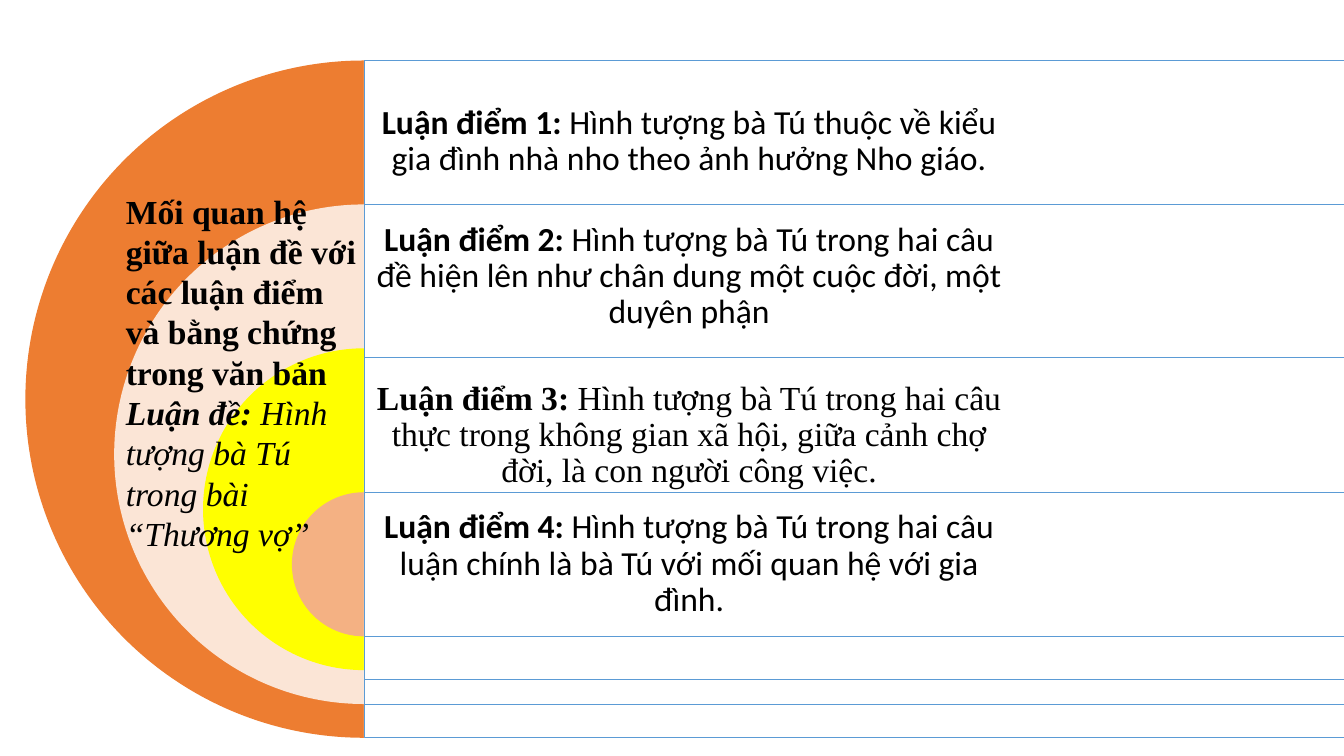
from lxml import etree
from pptx import Presentation
from pptx.dml.color import RGBColor
from pptx.enum.shapes import MSO_SHAPE
from pptx.enum.text import MSO_ANCHOR, MSO_AUTO_SIZE, PP_ALIGN
from pptx.oxml.ns import qn
from pptx.util import Pt

PIE, RECTANGLE = MSO_SHAPE.PIE, MSO_SHAPE.RECTANGLE
MIDDLE, TOP = MSO_ANCHOR.MIDDLE, MSO_ANCHOR.TOP
CENTER, LEFT = PP_ALIGN.CENTER, PP_ALIGN.LEFT
GROW, FIXED = MSO_AUTO_SIZE.SHAPE_TO_FIT_TEXT, MSO_AUTO_SIZE.NONE
SANS, SERIF = "Calibri", "Times New Roman"
BOLD, ITALIC, BOLD_ITALIC, PLAIN = {"bold": True}, {"italic": True}, {"bold": True, "italic": True}, {}

POINTS = [
    {"color": "ED7D31", "font": SANS, "shift": 0, "margins": (16.5, 3),
     "label": "Luận điểm 1: ",
     "text": "Hình tượng bà Tú thuộc về kiểu gia đình nhà nho theo ảnh hưởng Nho giáo."},
    {"color": "FBE5D6", "font": SANS, "shift": 0, "margins": (7.2, 7.2),
     "label": "Luận điểm 2: ",
     "text": "Hình tượng bà Tú trong hai câu đề hiện lên như chân dung một cuộc đời, một duyên phận"},
    {"color": "FFFF00", "font": SERIF, "shift": 6.5, "margins": (12, 3),
     "label": "Luận điểm 3: ",
     "text": "Hình tượng bà Tú trong hai câu thực trong không gian xã hội, giữa cảnh chợ đời, "
             "là con người công việc."},
    {"color": "F4B183", "font": SANS, "shift": 0, "margins": (7.2, 7.2),
     "label": "Luận điểm 4: ",
     "text": "Hình tượng bà Tú trong hai câu luận chính là bà Tú với mối quan hệ với gia đình."},
]
THESIS = [
    [("Mối quan hệ giữa luận đề với các luận điểm và bằng chứng trong văn bản", BOLD)],
    [("Luận đề: ", BOLD_ITALIC), ("Hình tượng bà Tú trong bài “Thương vợ”", ITALIC)],
]
AXIS, FIRST_TOP, ROW = 260, 43.2, 102.8
LARGEST, SHRINK = 483.8, 126.95
PANEL_WIDTH, TEXT_WIDTH = 929.5, 464.4


def color(hex_text):
    """Return the colour for a hex string."""
    return RGBColor.from_string(hex_text)


def add_filled(slide, kind, box, fill):
    """Add a flat filled shape without an outline."""
    shape = slide.shapes.add_shape(kind, *map(Pt, box))
    shape.shadow.inherit = False
    shape.fill.solid()
    shape.fill.fore_color.rgb = color(fill)
    shape.line.fill.background()
    return shape


def add_panel(slide, box):
    """Add a slightly transparent white panel with a thin blue outline."""
    panel = add_filled(slide, RECTANGLE, box, "FFFFFF")
    fill = panel.fill._xPr.find(qn("a:solidFill"))
    etree.SubElement(fill[0], qn("a:alpha"), val="90000")
    panel.line.color.rgb = color("5B9BD5")
    panel.line.width = Pt(0.5)


def add_text(slide, box, paragraphs, font_name, frame_format, paragraph_format):
    """Add a text box of paragraphs made of formatted runs."""
    frame = slide.shapes.add_textbox(*map(Pt, box)).text_frame
    for name, value in frame_format.items():
        setattr(frame, name, value)
    for index, runs in enumerate(paragraphs):
        paragraph = frame.add_paragraph() if index else frame.paragraphs[0]
        for name, value in paragraph_format.items():
            setattr(paragraph, name, value)
        for text, style in runs:
            run = paragraph.add_run()
            run.text = text
            run.font.color.rgb = color("000000")
            for name, value in {"name": font_name, "size": Pt(24), **style}.items():
                setattr(run.font, name, value)


def add_point(slide, index, point):
    """Add one half disc with its panel and its statement."""
    diameter = LARGEST - index * SHRINK
    top = FIRST_TOP + index * ROW
    disc = add_filled(slide, PIE, (AXIS - diameter / 2, top, diameter, diameter), point["color"])
    disc.adjustments[0], disc.adjustments[1] = 54, 162
    panel_top = top + point["shift"]
    add_panel(slide, (AXIS, panel_top, PANEL_WIDTH, diameter))
    margin_top, margin_bottom = point["margins"]
    side = Pt(min(point["margins"][1], 7.2) if index == 0 else 7.2)
    add_text(slide, (AXIS, panel_top, TEXT_WIDTH, ROW),
             [[(point["label"], BOLD), (point["text"], PLAIN)]], point["font"],
             {"word_wrap": True, "auto_size": FIXED, "vertical_anchor": MIDDLE,
              "margin_left": side, "margin_right": side,
              "margin_top": Pt(margin_top), "margin_bottom": Pt(margin_bottom)},
             {"alignment": CENTER, "line_spacing": 0.9})


def main():
    """Build the slide and save it."""
    presentation = Presentation()
    presentation.slide_width, presentation.slide_height = Pt(960), Pt(540)
    slide = presentation.slides.add_slide(presentation.slide_layouts[6])
    for index, point in enumerate(POINTS):
        add_point(slide, index, point)
    add_text(slide, (82.8, 132.5, 178.6, 269.3), THESIS, SERIF,
             {"word_wrap": True, "auto_size": GROW, "vertical_anchor": TOP},
             {"alignment": LEFT})
    presentation.save("out.pptx")


if __name__ == "__main__":
    main()
